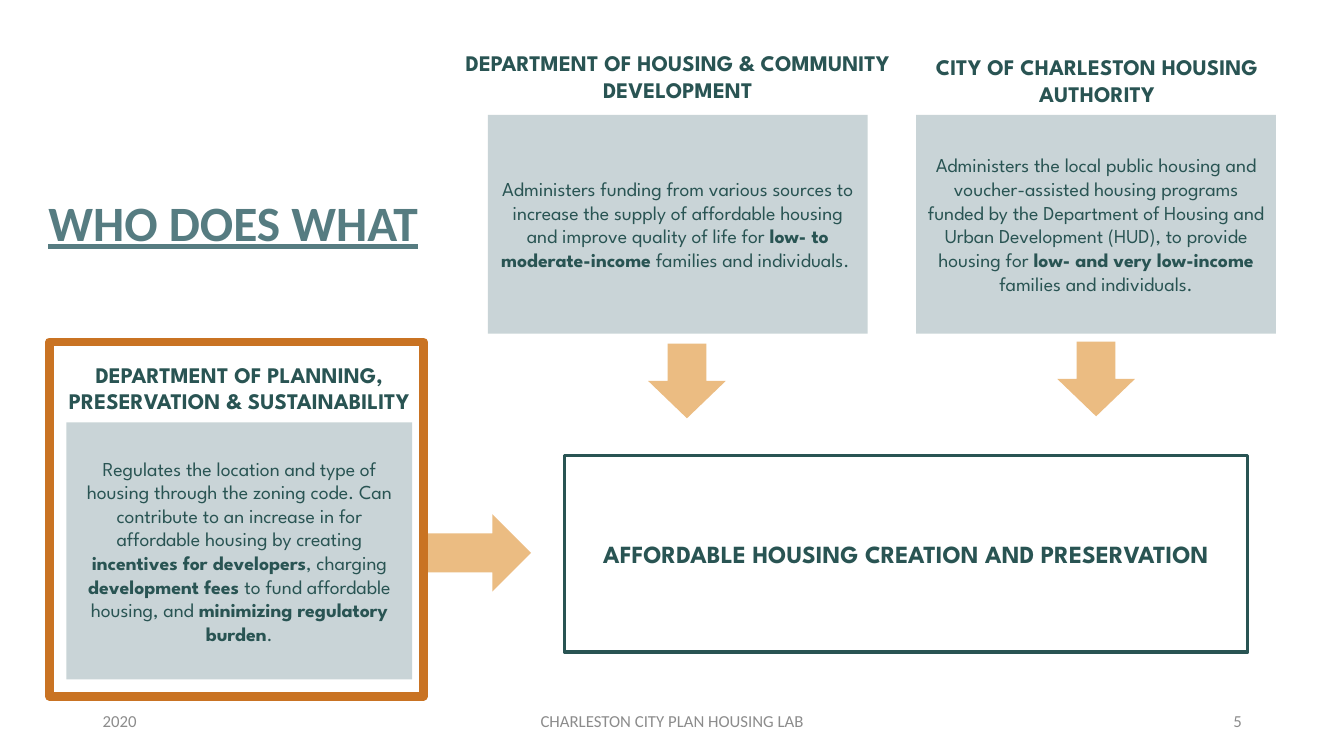
import pptx
import pptx.util
import pptx.dml.color
import pptx.enum.shapes
import pptx.enum.text

Pt = pptx.util.Pt
Shape = pptx.enum.shapes.MSO_SHAPE
Align = pptx.enum.text.PP_ALIGN
Anchor = pptx.enum.text.MSO_ANCHOR

COLORS = {
    "dark": "295453",
    "title": "567C81",
    "panel": "C9D4D7",
    "arrow": "EBBC82",
    "highlight": "C97323",
    "footer": "8C8C8C",
}
HEADING_FONT = "League Spartan"
PLAIN_FONT = "Calibri"

# Each department: heading, heading box, panel box, (text, bold) runs
DEPARTMENTS = [
    ("DEPARTMENT OF PLANNING, PRESERVATION & SUSTAINABILITY",
     (7.9, 254.2, 326.2, 46), (47.5, 301.7, 247, 183.6),
     [("Regulates the location and type of housing through the zoning code. "
       "Can contribute to an increase in for affordable housing by creating ", False),
      ("incentives for developers", True),
      (", charging ", False),
      ("development fees ", True),
      ("to fund affordable housing, and ", False),
      ("minimizing regulatory burden", True),
      (".", False)]),
    ("DEPARTMENT OF HOUSING & COMMUNITY DEVELOPMENT",
     (321.1, 31.7, 326.2, 46), (348.5, 82.1, 271.4, 156.2),
     [("Administers funding from various sources to increase the supply of "
       "affordable housing and improve quality of life for ", False),
      ("low- to moderate-income", True),
      (" families and individuals. ", False)]),
    ("CITY OF CHARLESTON HOUSING AUTHORITY",
     (620.6, 34.6, 326.2, 46), (654.5, 82.1, 257, 156.2),
     [("Administers the local public housing and voucher-assisted housing "
       "programs funded by the Department of Housing and Urban Development "
       "(HUD), to provide housing for ", False),
      ("low- and very low-income ", True),
      ("families and individuals.", False)]),
]

# Each arrow: box before rotation, rotation in degrees
ARROWS = [
    ((313.2, 356.4, 55.4, 77), 270),
    ((463, 245.5, 55.4, 53.3), 0),
    ((755.3, 244.1, 55.4, 53.3), 0),
]

FOOTERS = [
    ("2020", 66.2, 216, Align.LEFT),
    ("CHARLESTON CITY PLAN HOUSING LAB", 318.2, 324, Align.CENTER),
    ("5", 678.2, 216, Align.RIGHT),
]


def color(name):
    return pptx.dml.color.RGBColor.from_string(COLORS[name])


def points(box):
    return [Pt(length) for length in box]


def write(shape, runs, size, font, color_name, align=Align.CENTER,
          anchor=Anchor.MIDDLE, bold=None):
    """Fill the shape with one paragraph of (text, bold) runs."""
    frame = shape.text_frame
    frame.word_wrap = True
    frame.vertical_anchor = anchor
    paragraph = frame.paragraphs[0]
    paragraph.alignment = align
    paragraph.font.size = Pt(size)
    paragraph.font.name = font
    paragraph.font.color.rgb = color(color_name)
    paragraph.font.bold = bold
    for text, run_bold in runs:
        run = paragraph.add_run()
        run.text = text
        if run_bold:
            run.font.bold = True
    return paragraph


def add_label(slide, text, box, size, font, color_name, **style):
    label = slide.shapes.add_textbox(*points(box))
    write(label, [(text, False)], size, font, color_name, **style)


def add_block(slide, kind, box, fill=None, line=None, line_width=0):
    block = slide.shapes.add_shape(kind, *points(box))
    block.shadow.inherit = False
    if fill:
        block.fill.solid()
        block.fill.fore_color.rgb = color(fill)
    else:
        block.fill.background()
    if line:
        block.line.color.rgb = color(line)
        block.line.width = Pt(line_width)
    else:
        block.line.fill.background()
    return block


def add_title(slide, text):
    title = slide.shapes.title
    title.left, title.top, title.width, title.height = points((34.6, 137.5, 337.7, 42.5))
    frame = title.text_frame
    frame.margin_left = frame.margin_right = frame.margin_top = frame.margin_bottom = 0
    paragraph = write(title, [(text, False)], 35.3, PLAIN_FONT, "title",
                      align=Align.LEFT, anchor=Anchor.TOP, bold=True)
    paragraph.font.underline = True


def add_department(slide, heading, heading_box, panel_box, runs):
    add_label(slide, heading, heading_box, 15.9, HEADING_FONT, "dark",
              anchor=Anchor.TOP, bold=True)
    panel = add_block(slide, Shape.RECTANGLE, panel_box, fill="panel")
    write(panel, runs, 14.1, HEADING_FONT, "dark")


def main():
    presentation = pptx.Presentation()
    presentation.slide_width = Pt(960)
    presentation.slide_height = Pt(540)
    title_only = presentation.slide_layouts[5]
    slide = presentation.slides.add_slide(title_only)

    add_title(slide, "WHO DOES WHAT")
    for text, left, width, align in FOOTERS:
        add_label(slide, text, (left, 500.4, width, 28.8), 12, PLAIN_FONT,
                  "footer", align=align)
    for department in DEPARTMENTS:
        add_department(slide, *department)
    for box, rotation in ARROWS:
        arrow = add_block(slide, Shape.DOWN_ARROW, box, fill="arrow")
        arrow.rotation = rotation

    outcome = add_block(slide, Shape.RECTANGLE, (403.2, 325.4, 488.2, 140.4),
                        line="dark", line_width=2.25)
    write(outcome, [("AFFORDABLE HOUSING CREATION AND PRESERVATION", False)],
          17.6, HEADING_FONT, "dark", bold=True)
    add_block(slide, Shape.RECTANGLE, (35.3, 244.1, 267.1, 253.4),
              line="highlight", line_width=6)

    presentation.save("out.pptx")


if __name__ == "__main__":
    main()
